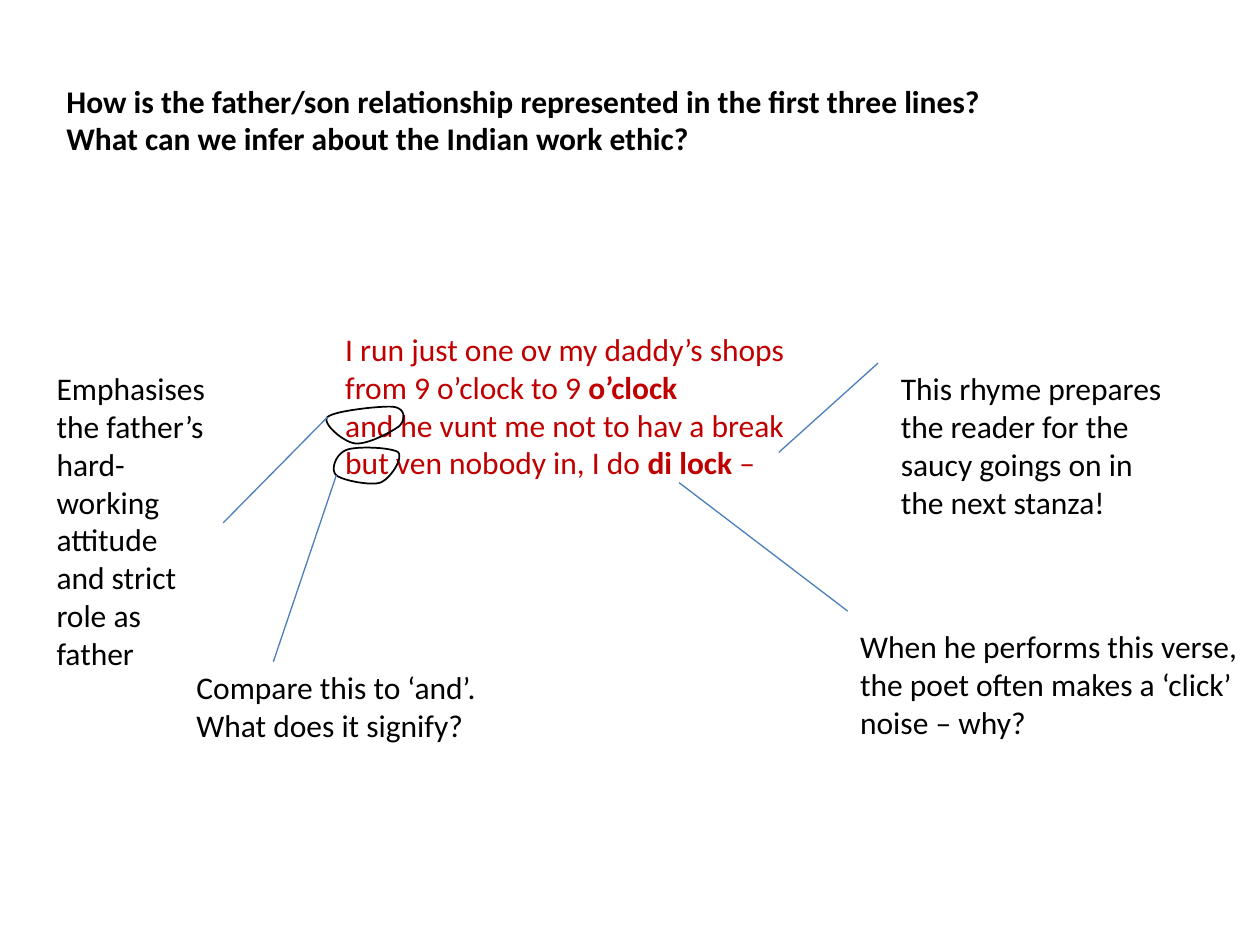
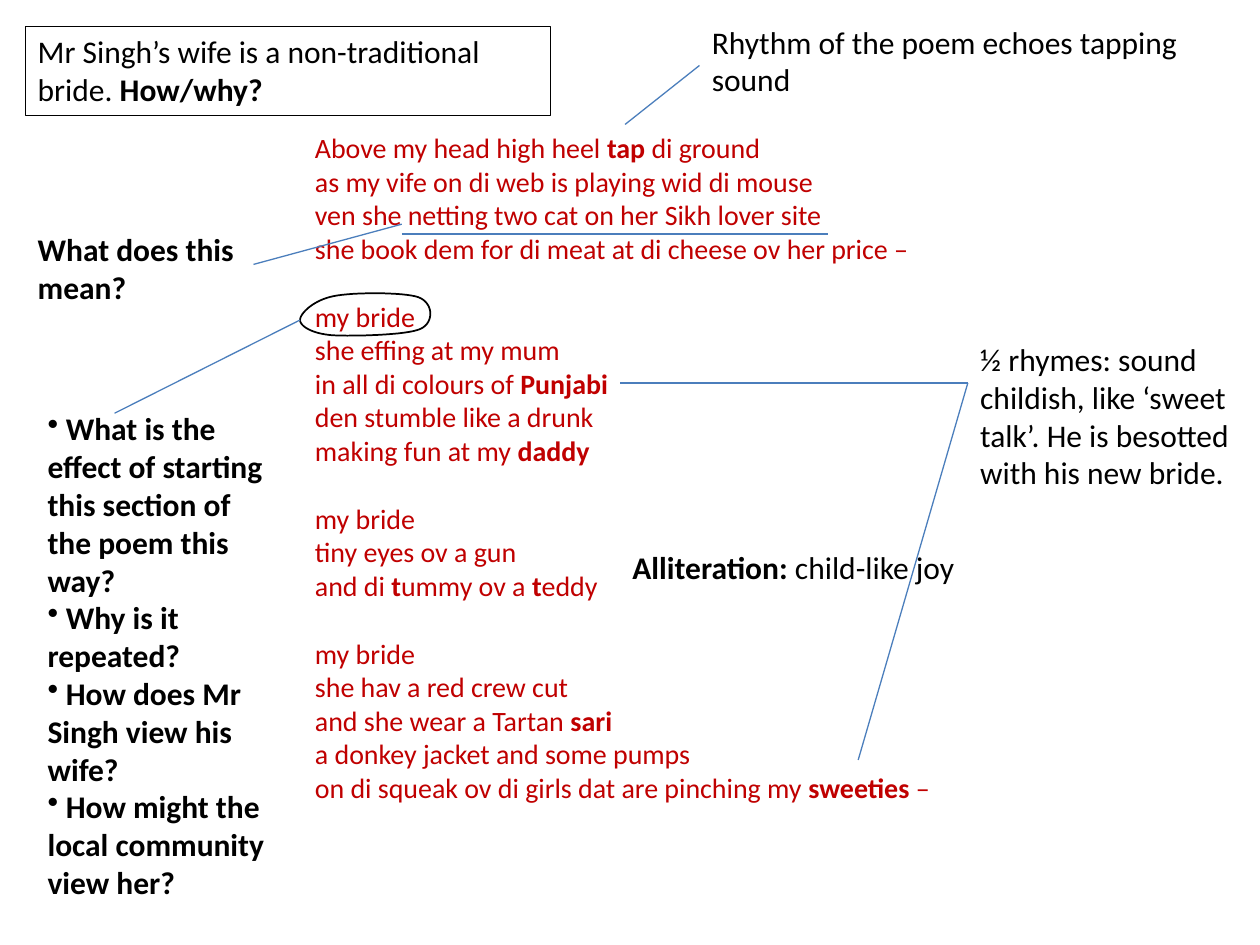
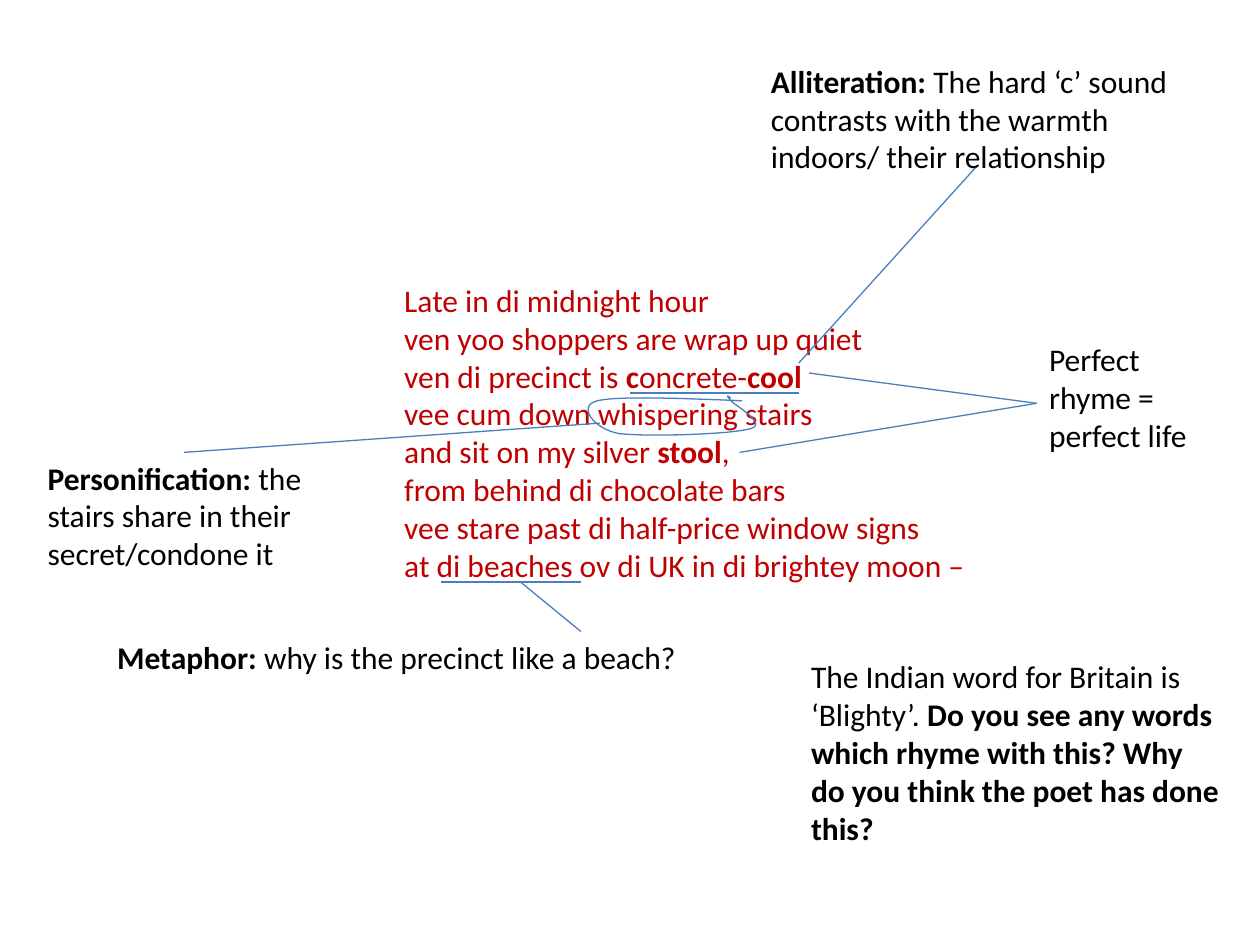
from lxml.etree import SubElement
from pptx import Presentation
from pptx.dml.color import RGBColor
from pptx.enum.shapes import MSO_CONNECTOR, MSO_SHAPE
from pptx.enum.text import MSO_ANCHOR, MSO_AUTO_SIZE, PP_ALIGN
from pptx.oxml.ns import qn
from pptx.util import Cm, Pt

# Shared look
FONT = "Calibri"
BLACK, POEM_RED, LINE_BLUE = "000000", "C00000", "4B7EBC"
CURVE_STEPS = 16


def rgb(value):
    return RGBColor.from_string(value)


def set_line(line, color, width):
    line.color.rgb = rgb(color)
    line.width = Pt(width)


def fill_text(tf, text, size=18, color=BLACK, wrap=True, bullet=None):
    """One paragraph per line; **marks** switch bold; an empty line opens a gap."""
    tf.word_wrap = wrap
    tf.auto_size = MSO_AUTO_SIZE.SHAPE_TO_FIT_TEXT
    tf.vertical_anchor = MSO_ANCHOR.TOP
    p, gap = None, False
    for row in text.split("\n"):
        if not row:
            gap = True
            continue
        p = tf.add_paragraph() if p is not None else tf.paragraphs[0]
        p.alignment = PP_ALIGN.LEFT
        if gap:
            p.space_before = Pt(size * 1.22)
            gap = False
        if bullet:
            SubElement(p._p.get_or_add_pPr(), qn("a:buChar")).set("char", bullet)
        for i, part in enumerate(row.split("**")):
            if part:
                r = p.add_run()
                r.text = part
                r.font.name, r.font.size = FONT, Pt(size)
                r.font.bold = i % 2 == 1
                r.font.color.rgb = rgb(color)


def note(s, x, y, w, h, text, **fmt):
    tb = s.shapes.add_textbox(Cm(x), Cm(y), Cm(w), Cm(h))
    fill_text(tb.text_frame, text, **fmt)


def poem(s, x, y, w, h, text, size=18):
    note(s, x, y, w, h, text, size=size, color=POEM_RED, wrap=False)


def framed_note(s, x, y, w, h, text):
    sp = s.shapes.add_shape(MSO_SHAPE.RECTANGLE, Cm(x), Cm(y), Cm(w), Cm(h))
    sp.shadow.inherit = False
    sp.fill.background()
    set_line(sp.line, BLACK, 0.75)
    fill_text(sp.text_frame, text)


def pointer(s, x1, y1, x2, y2):
    c = s.shapes.add_connector(MSO_CONNECTOR.STRAIGHT, Cm(x1), Cm(y1), Cm(x2), Cm(y2))
    set_line(c.line, LINE_BLUE, 0.75)
    SubElement(c._element.spPr, qn("a:effectLst"))


def bezier(a, b, c, d, t):
    u = 1 - t
    return tuple(u**3 * i + 3 * u * u * t * j + 3 * u * t * t * k + t**3 * m
                 for i, j, k, m in zip(a, b, c, d))


def loop(s, points, color=BLACK, width=1, close=True):
    """Hand-drawn ring: a start point, then two controls and an end per curve."""
    if close:
        points = points + points[:1]
    dots = [bezier(*points[i:i + 4], n / CURVE_STEPS)
            for i in range(0, len(points) - 1, 3)
            for n in range(1, CURVE_STEPS + 1)]
    emu = [(Cm(x), Cm(y)) for x, y in points[:1] + dots]
    builder = s.shapes.build_freeform(*emu[0], scale=1.0)
    builder.add_line_segments(emu[1:], close=close)
    sp = builder.convert_to_shape()
    sp.shadow.inherit = False
    sp.fill.background()
    set_line(sp.line, color, width)


def father_and_son(s):
    poem(s, 6.71, 6.53, 9.47, 4.11,
         "I run just one ov my daddy’s shops\n"
         "from 9 o’clock to 9 **o’clock**\n"
         "and he vunt me not to hav a break\n"
         "but ven nobody in, I do **di lock **–")
    note(s, 1.09, 1.52, 19.08, 1.8,
         "**How is the father/son relationship represented in the first three lines?**\n"
         "**What can we infer about the Indian work ethic?**", wrap=False)

    # Rhyme and sound
    pointer(s, 15.7, 9.12, 17.7, 7.32)
    note(s, 17.91, 7.32, 5.79, 3.33,
         "This rhyme prepares the reader for the saucy goings on in the next stanza!")
    pointer(s, 13.69, 9.73, 17.09, 12.32)
    note(s, 17.09, 12.52, 8.31, 2.57,
         "When he performs this verse, the poet often makes a ‘click’ noise – why?")

    # Ringed "and"
    loop(s, [(7.92, 8.2), (7.7, 8.18), (6.73, 8.28), (6.6, 8.41),
             (6.48, 8.53), (6.93, 8.92), (7.16, 8.94),
             (7.42, 8.97), (7.92, 8.69), (8.05, 8.59),
             (8.18, 8.46), (8.18, 8.23)])
    pointer(s, 6.6, 8.41, 4.5, 10.54)
    note(s, 0.89, 7.32, 3.61, 6.4,
         "Emphasises the father’s hard-working attitude and strict role as father")

    # Ringed "but"
    loop(s, [(8.03, 9.12), (7.9, 9.02), (7.19, 8.99), (6.99, 9.07),
             (6.78, 9.14), (6.65, 9.47), (6.78, 9.58),
             (6.88, 9.68), (7.47, 9.8), (7.67, 9.73),
             (7.87, 9.65), (8.13, 9.25)])
    pointer(s, 6.78, 9.58, 5.51, 13.34)
    note(s, 3.71, 13.34, 7.19, 1.8, "Compare this to ‘and’. What does it signify?")


def bride(s):
    poem(s, 6.1, 2.51, 13, 13.94,
         "Above my head high heel **tap **di ground\n"
         "as my vife on di web is playing wid di mouse\n"
         "ven she netting two cat on her Sikh lover site\n"
         "she book dem for di meat at di cheese ov her price –\n"
         "\n"
         "my bride\n"
         "she effing at my mum\n"
         "in all di colours of **Punjabi**\n"
         "den stumble like a drunk\n"
         "making fun at my **daddy**\n"
         "\n"
         "my bride\n"
         "tiny eyes ov a gun\n"
         "and di **t**ummy ov a **t**eddy\n"
         "\n"
         "my bride\n"
         "she hav a red crew cut\n"
         "and she wear a Tartan **sari**\n"
         "a donkey jacket and some pumps\n"
         "on di squeak ov di girls dat are pinching my **sweeties** –", size=16)
    framed_note(s, 0.51, 0.53, 10.59, 1.8,
                "Mr Singh’s wife is a non-traditional bride. **How/why?**")

    # Rhythm, rhyme and alliteration
    pointer(s, 12.6, 2.51, 14.1, 1.32)
    note(s, 14.1, 0.33, 10.8, 1.8, "Rhythm of the poem echoes tapping sound")
    note(s, 19.51, 6.73, 5.59, 3.33,
         "½ rhymes: sound childish, like ‘sweet talk’. He is besotted with his new bride.")
    pointer(s, 12.5, 7.72, 19.51, 7.72)
    pointer(s, 17.3, 15.32, 19.51, 7.72)
    note(s, 12.5, 10.92, 7.06, 1.02, "**Alliteration: **child-like joy", wrap=False)

    # Underlined phrase
    pointer(s, 8.1, 4.72, 16.69, 4.72)
    note(s, 0.51, 4.52, 5.59, 1.8, "**What does this mean?**")
    pointer(s, 8.1, 4.52, 5.11, 5.33)

    # Ringed "my bride"
    loop(s, [(6.73, 5.97), (6.32, 6.05), (6.05, 6.32), (6.05, 6.45),
             (6.05, 6.58), (6.3, 6.73), (6.71, 6.76),
             (7.11, 6.78), (8.2, 6.76), (8.48, 6.63),
             (8.76, 6.5), (8.74, 6.1), (8.43, 5.99),
             (8.13, 5.89), (7.11, 5.89)])
    pointer(s, 6.05, 6.45, 2.31, 8.33)
    note(s, 0.71, 8.13, 5.21, 10.26,
         "** What is the effect of starting this section of the poem this way?**\n"
         "** Why is it repeated?**\n"
         "** How does Mr Singh view his wife?**\n"
         "** How might the local community view her?**", bullet="•")


def midnight(s):
    poem(s, 7.9, 5.54, 11.96, 7.19,
         "Late in di midnight hour\n"
         "ven yoo shoppers are wrap up quiet\n"
         "ven di precinct is **c**oncrete-**cool**\n"
         "vee cum down whispering stairs\n"
         "and sit on my silver **stool**,\n"
         "from behind di chocolate bars\n"
         "vee stare past di half-price window signs\n"
         "at di beaches ov di UK in di brightey moon –")

    # Rhyme
    for x, y in [(16.31, 7.52), (14.91, 9.12)]:
        pointer(s, x, y, 20.9, 8.13)
    note(s, 20.9, 6.73, 3.99, 2.57, "Perfect rhyme = perfect life")

    # Alliteration
    pointer(s, 12.7, 7.92, 16.1, 7.92)
    pointer(s, 16.1, 7.32, 19.71, 3.33)
    note(s, 15.29, 1.12, 9.6, 2.57,
         "**Alliteration: **The hard ‘c’ sound contrasts with the warmth "
         "indoors/ their relationship")

    # Personification: ringed "whispering"
    loop(s, [(14.96, 8.08), (13.72, 8.03), (12.47, 7.98), (12.04, 8.08),
             (11.63, 8.18), (11.96, 8.64), (12.47, 8.74),
             (13, 8.81), (14.76, 8.76), (15.14, 8.64),
             (15.49, 8.53), (14.76, 8.15), (14.71, 8.05),
             (14.63, 7.95), (14.68, 7.98), (14.73, 8.03)],
         color=LINE_BLUE, width=0.75, close=False)
    pointer(s, 12.09, 8.53, 3.71, 9.12)
    note(s, 0.71, 9.12, 5.79, 2.59,
         "**Personification: **the stairs share in their secret/condone it")

    # Metaphor
    pointer(s, 8.89, 11.73, 11.71, 11.73)
    pointer(s, 10.49, 11.73, 11.71, 12.73)
    note(s, 2.11, 12.73, 11.86, 1.02,
         "**Metaphor: **why is the precinct like a beach?", wrap=False)
    note(s, 16.1, 13.13, 8.79, 4.11,
         "The Indian word for Britain is ‘Blighty’. **Do you see any words which "
         "rhyme with this? Why do you think the poet has done this?**")


def main():
    prs = Presentation()
    prs.slide_width, prs.slide_height = Cm(25.4), Cm(19.05)
    blank = prs.slide_layouts[6]
    for build in (father_and_son, bride, midnight):
        build(prs.slides.add_slide(blank))
    prs.save("out.pptx")


if __name__ == "__main__":
    main()
